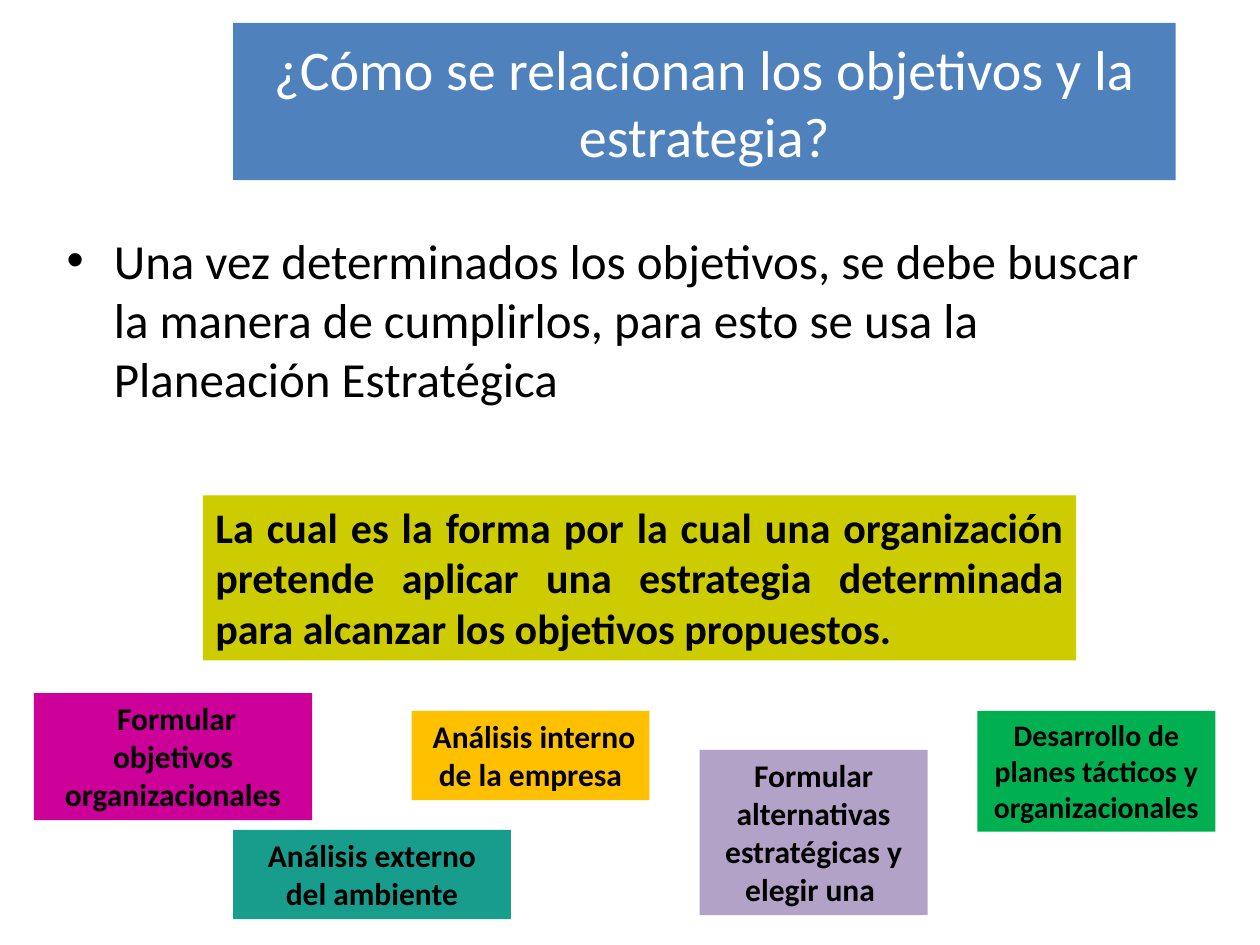
"""Build the slide on how objectives relate to strategy."""
from lxml import etree
from pptx import Presentation
from pptx.dml.color import RGBColor
from pptx.enum.shapes import MSO_SHAPE
from pptx.enum.text import MSO_ANCHOR as Anchor, MSO_AUTO_SIZE as AutoSize, PP_ALIGN as Align
from pptx.oxml.ns import qn
from pptx.util import Pt

COLORS = {
    "title": "4F81BD",
    "definition": "CCCC00",
    "objectives": "CC0099",
    "external": "189C8C",
    "internal": "FFC000",
    "alternatives": "B3A2C7",
    "plans": "00B050",
    "black": "000000",
    "white": "FFFFFF",
}

STEPS = [
    ("objectives", " Formular objetivos organizacionales", (19.4, 396, 159, 72.7), 18),
    ("external", "Análisis externo del ambiente", (133.2, 474.2, 158.7, 51), 18),
    ("internal", " Análisis interno de la empresa", (235.2, 406.2, 136, 51), 18),
    ("alternatives", "Formular alternativas estratégicas y elegir una ", (399.8, 428.6, 130.3, 94.4), 18),
    ("plans", "Desarrollo de planes tácticos y organizacionales", (558.5, 406.2, 136, 69), 17),
]


def rgb(name):
    return RGBColor.from_string(COLORS[name])


def write_text(shape, text, size, color="black", bold=False, align=Align.LEFT):
    text_frame = shape.text_frame
    text_frame.word_wrap = True
    text_frame.text = text
    paragraph = text_frame.paragraphs[0]
    paragraph.alignment = align
    font = paragraph.runs[0].font
    font.name = "Calibri"
    font.size = Pt(size)
    font.bold = bold
    font.color.rgb = rgb(color)


def add_box(slide, box, fill, anchor=Anchor.TOP, auto_size=AutoSize.SHAPE_TO_FIT_TEXT, **text_style):
    shape = slide.shapes.add_shape(MSO_SHAPE.RECTANGLE, *map(Pt, box))
    shape.shadow.inherit = False
    shape.fill.solid()
    shape.fill.fore_color.rgb = rgb(fill)
    shape.line.fill.background()
    write_text(shape, **text_style)
    shape.text_frame.vertical_anchor = anchor
    shape.text_frame.auto_size = auto_size


def add_bullet_text(slide, box, text, size, indent):
    shape = slide.shapes.add_textbox(*map(Pt, box))
    write_text(shape, text, size)
    properties = shape.text_frame.paragraphs[0]._p.get_or_add_pPr()
    properties.set("marL", str(Pt(indent)))
    properties.set("indent", str(-Pt(indent)))
    etree.SubElement(properties, qn("a:buFont")).set("typeface", "Arial")
    etree.SubElement(properties, qn("a:buChar")).set("char", "•")


def main():
    presentation = Presentation()
    presentation.slide_width = Pt(720)
    presentation.slide_height = Pt(540)
    slide = presentation.slides.add_slide(presentation.slide_layouts[6])

    add_box(slide, (133.2, 13, 538.6, 90), "title", Anchor.MIDDLE, AutoSize.NONE,
            text="¿Cómo se relacionan los objetivos y la estrategia?",
            size=32, color="white", align=Align.CENTER)
    add_bullet_text(slide, (31, 128.2, 648, 132.5),
                    "Una vez determinados los objetivos, se debe buscar la manera de "
                    "cumplirlos, para esto se usa la Planeación Estratégica", 28, 27)
    add_box(slide, (116, 283, 499, 94.3), "definition",
            text="La cual es la forma por la cual una organización pretende aplicar una "
                 "estrategia determinada para alcanzar los objetivos propuestos.",
            size=24, bold=True, align=Align.JUSTIFY)
    for fill, text, box, size in STEPS:
        add_box(slide, box, fill, text=text, size=size, bold=True, align=Align.CENTER)

    presentation.save("out.pptx")


if __name__ == "__main__":
    main()
